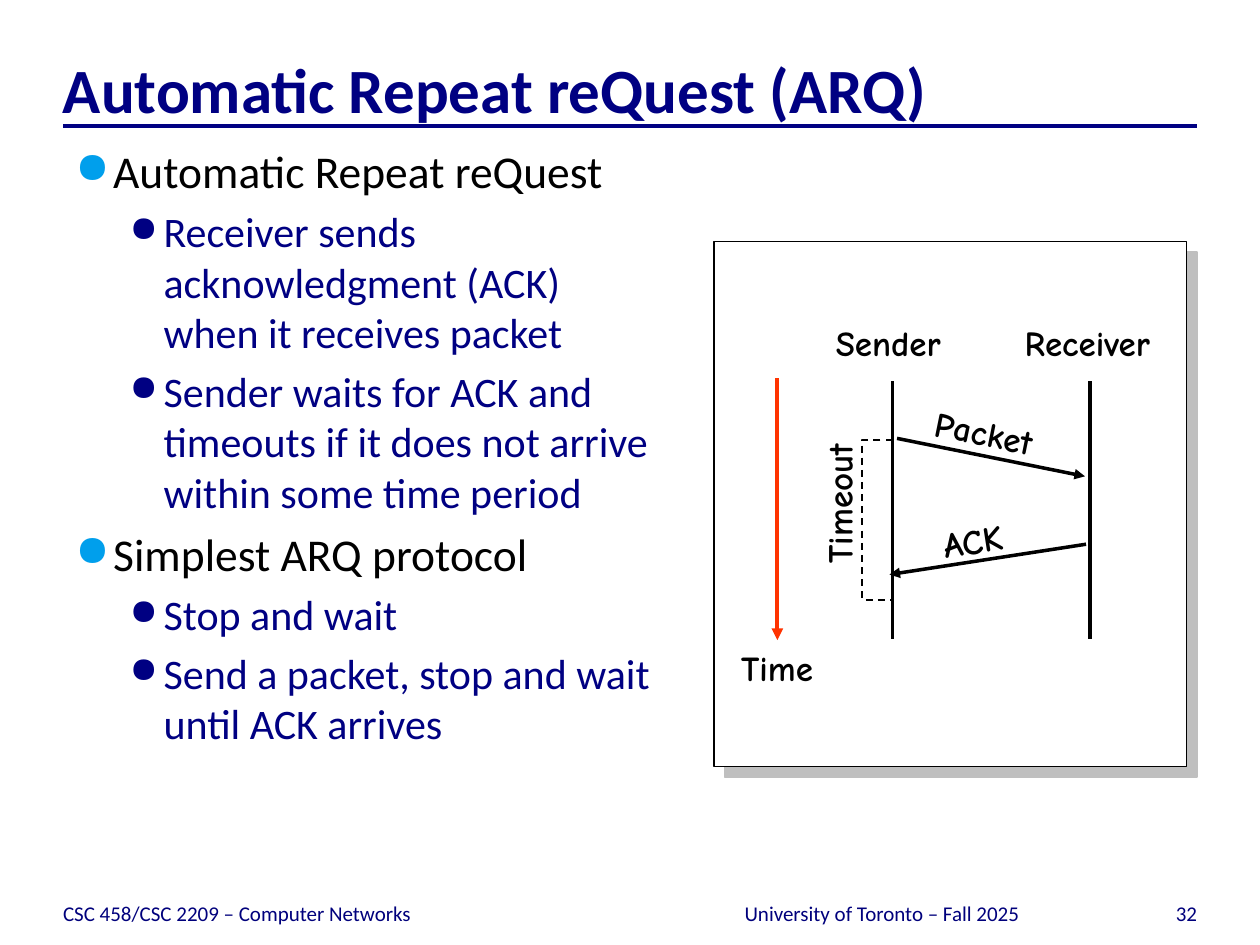
from dataclasses import dataclass

from lxml.etree import SubElement
from pptx import Presentation
from pptx.dml.color import RGBColor
from pptx.enum.dml import MSO_LINE
from pptx.enum.shapes import MSO_CONNECTOR, MSO_SHAPE
from pptx.enum.text import MSO_ANCHOR as Anchor, PP_ALIGN as Align
from pptx.oxml.ns import qn
from pptx.util import Pt

NAVY, FOOTER_NAVY, SKY = "000082", "00007C", "009FEC"
BLACK, WHITE, GREY, RED = "000000", "FFFFFF", "BFBFBF", "FF3300"
BODY_FONT, LABEL_FONT = "Calibri", "Comic Neue"


@dataclass
class Level:
    size: float
    color: str
    bullet_color: str
    bullet_percent: int
    left: float
    hanging: float


@dataclass
class Footer:
    text: str
    left: float
    width: float
    align: Align


@dataclass
class Label:
    text: str
    center_x: float
    center_y: float
    width: float
    rotation: float = 0


@dataclass
class Line:
    start: tuple[float, float]
    end: tuple[float, float]
    color: str = BLACK
    width: float = 2
    arrow: bool = False


LEVELS = [
    Level(26, BLACK, SKY, 95, 21.6, 21.6),
    Level(24, NAVY, NAVY, 85, 50.4, 19.4),
]
BULLETS = [
    (0, "Automatic Repeat reQuest"),
    (1, "Receiver sends acknowledgment (ACK) when it receives packet"),
    (1, "Sender waits for ACK and timeouts if it does not arrive within some time period"),
    (0, "Simplest ARQ protocol"),
    (1, "Stop and wait"),
    (1, "Send a packet, stop and wait until ACK arrives"),
]
FOOTERS = [
    Footer("CSC 458/CSC 2209 – Computer Networks", 36, 348, Align.LEFT),
    Footer("University of Toronto – Fall 2025", 390, 228, Align.CENTER),
    Footer("32", 624, 60, Align.RIGHT),
]
SENDER_X, RECEIVER_X, TIME_X = 510, 622.8, 444.2
LIFE_TOP, LIFE_BOTTOM = 218, 365
LINES = [
    Line((SENDER_X, LIFE_TOP), (SENDER_X, LIFE_BOTTOM)),
    Line((RECEIVER_X, LIFE_TOP), (RECEIVER_X, LIFE_BOTTOM)),
    Line((TIME_X, 216), (TIME_X, 365.8), RED, 2.25, arrow=True),
    Line((512.6, 250.5), (620, 272.2), arrow=True),
    Line((620.6, 311), (508.3, 328.3), arrow=True),
]
LABELS = [
    Label("Sender", 507.6, 195.8, 76),
    Label("Receiver", 621.4, 195.8, 91),
    Label("Time", 444, 381.6, 57),
    Label("Packet", 562.3, 247, 75, 11.5),
    Label("ACK", 555.8, 308.9, 58, -8.8),
    Label("Timeout", 479.2, 287.7, 96, -90),
]
BRACKET = [(SENDER_X, 251.3), (492.5, 251.3), (492.5, 342.7), (SENDER_X, 342.7)]


def rgb(color: str) -> RGBColor:
    return RGBColor.from_string(color)


def set_font(paragraph, name: str, size: float, color: str, bold: bool = False) -> None:
    font = paragraph.font
    font.name, font.size, font.bold = name, Pt(size), bold
    font.color.rgb = rgb(color)


def add_frame(slide, left: float, top: float, width: float, height: float,
              anchor: Anchor, insets=(7.2, 3.6, 7.2, 3.6), wrap: bool = True):
    shape = slide.shapes.add_textbox(Pt(left), Pt(top), Pt(width), Pt(height))
    frame = shape.text_frame
    frame.word_wrap, frame.vertical_anchor = wrap, anchor
    (frame.margin_left, frame.margin_top,
     frame.margin_right, frame.margin_bottom) = map(Pt, insets)
    return shape


def add_bullet(paragraph, text: str, depth: int) -> None:
    level = LEVELS[depth]
    paragraph.text, paragraph.level = text, depth
    paragraph.space_before = Pt(level.size * 0.2)
    properties = paragraph._p.get_or_add_pPr()
    properties.set("marL", str(Pt(level.left)))
    properties.set("indent", str(-Pt(level.hanging)))
    bullet_color = SubElement(properties, qn("a:buClr"))
    SubElement(bullet_color, qn("a:srgbClr"), val=level.bullet_color)
    SubElement(properties, qn("a:buSzPct"), val=str(level.bullet_percent * 1000))
    SubElement(properties, qn("a:buChar"), char="●")
    set_font(paragraph, BODY_FONT, level.size, level.color)


def add_line(slide, line: Line) -> None:
    connector = slide.shapes.add_connector(
        MSO_CONNECTOR.STRAIGHT, *map(Pt, line.start + line.end))
    connector.line.color.rgb = rgb(line.color)
    connector.line.width = Pt(line.width)
    if line.arrow:
        SubElement(connector.line._get_or_add_ln(), qn("a:tailEnd"), type="triangle")
    SubElement(connector._element.spPr, qn("a:effectLst"))


def add_label(slide, label: Label) -> None:
    height = 31.7
    shape = add_frame(slide, label.center_x - label.width / 2, label.center_y - height / 2,
                      label.width, height, Anchor.MIDDLE, wrap=False)
    shape.rotation = label.rotation
    paragraph = shape.text_frame.paragraphs[0]
    paragraph.text, paragraph.alignment = label.text, Align.CENTER
    set_font(paragraph, LABEL_FONT, 20, BLACK, bold=True)


def add_panel(slide) -> None:
    panel = slide.shapes.add_shape(MSO_SHAPE.RECTANGLE, Pt(408), Pt(138), Pt(270), Pt(300))
    panel.fill.solid()
    panel.fill.fore_color.rgb = rgb(WHITE)
    panel.line.color.rgb = rgb(BLACK)
    panel.line.width = Pt(0.75)
    effects = SubElement(panel._element.spPr, qn("a:effectLst"))
    shadow = SubElement(effects, qn("a:outerShdw"), blurRad="0", dist=str(Pt(8.5)),
                        dir=str(45 * 60000), algn="ctr", rotWithShape="0")
    SubElement(shadow, qn("a:srgbClr"), val=GREY)


def add_bracket(slide) -> None:
    points = [(Pt(x), Pt(y)) for x, y in BRACKET]
    builder = slide.shapes.build_freeform(*points[0])
    builder.add_line_segments(points[1:], close=False)
    bracket = builder.convert_to_shape()
    bracket.fill.background()
    bracket.line.color.rgb = rgb(BLACK)
    bracket.line.width = Pt(1)
    bracket.line.dash_style = MSO_LINE.DASH
    bracket.shadow.inherit = False


def main() -> None:
    presentation = Presentation()
    presentation.slide_width, presentation.slide_height = Pt(720), Pt(540)
    slide = presentation.slides.add_slide(presentation.slide_layouts[6])

    # Title and rule
    add_line(slide, Line((36, 72), (684, 72), NAVY, 2.25))
    title = add_frame(slide, 36, 24, 648, 48, Anchor.BOTTOM, (0, 3.6, 0, 0))
    paragraph = title.text_frame.paragraphs[0]
    paragraph.text = "Automatic Repeat reQuest (ARQ)"
    set_font(paragraph, BODY_FONT, 36, NAVY, bold=True)

    # Bulleted text
    body = add_frame(slide, 36, 78, 348, 422, Anchor.TOP).text_frame
    for index, (depth, text) in enumerate(BULLETS):
        add_bullet(body.add_paragraph() if index else body.paragraphs[0], text, depth)

    # Footer
    for footer in FOOTERS:
        shape = add_frame(slide, footer.left, 500.4, footer.width, 28.8,
                          Anchor.BOTTOM, (0, 0, 0, 0))
        paragraph = shape.text_frame.paragraphs[0]
        paragraph.text, paragraph.alignment = footer.text, footer.align
        set_font(paragraph, BODY_FONT, 12, FOOTER_NAVY)

    # Timing diagram
    add_panel(slide)
    add_bracket(slide)
    for line in LINES:
        add_line(slide, line)
    for label in LABELS:
        add_label(slide, label)

    presentation.save("out.pptx")


if __name__ == "__main__":
    main()
